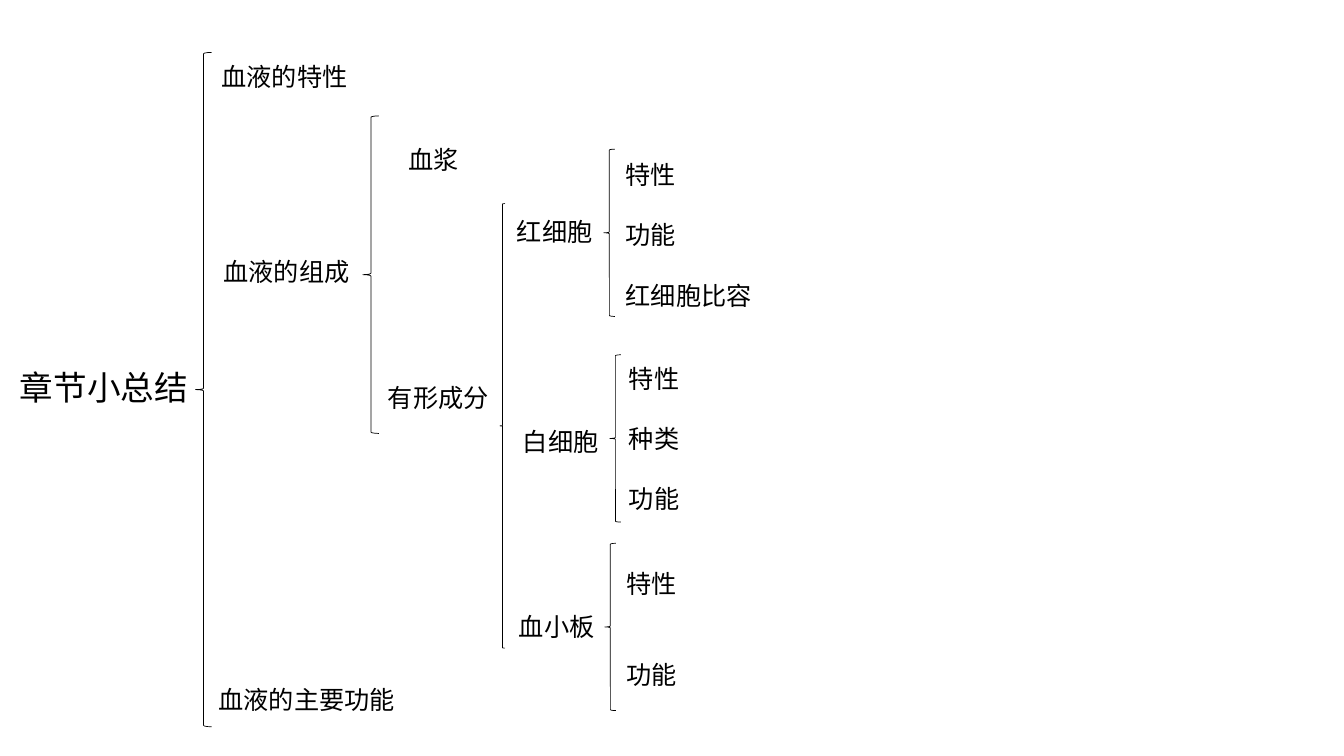
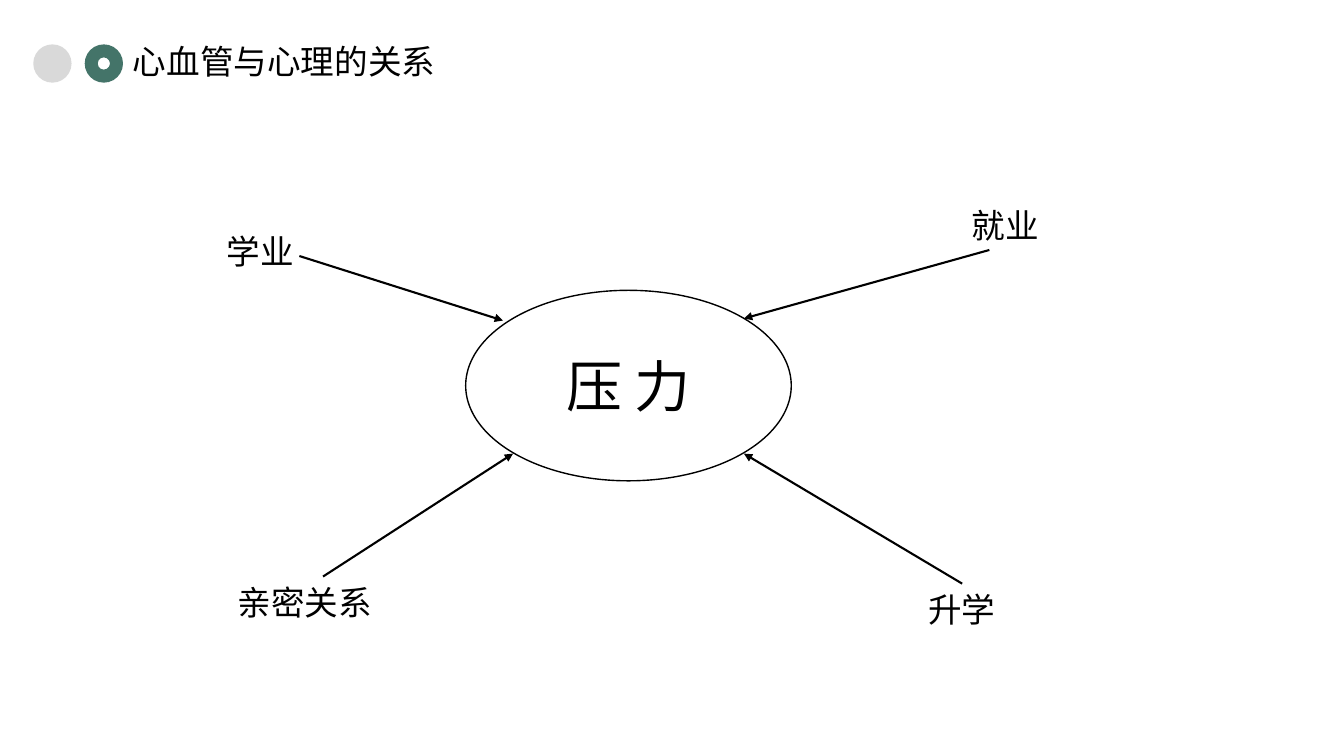
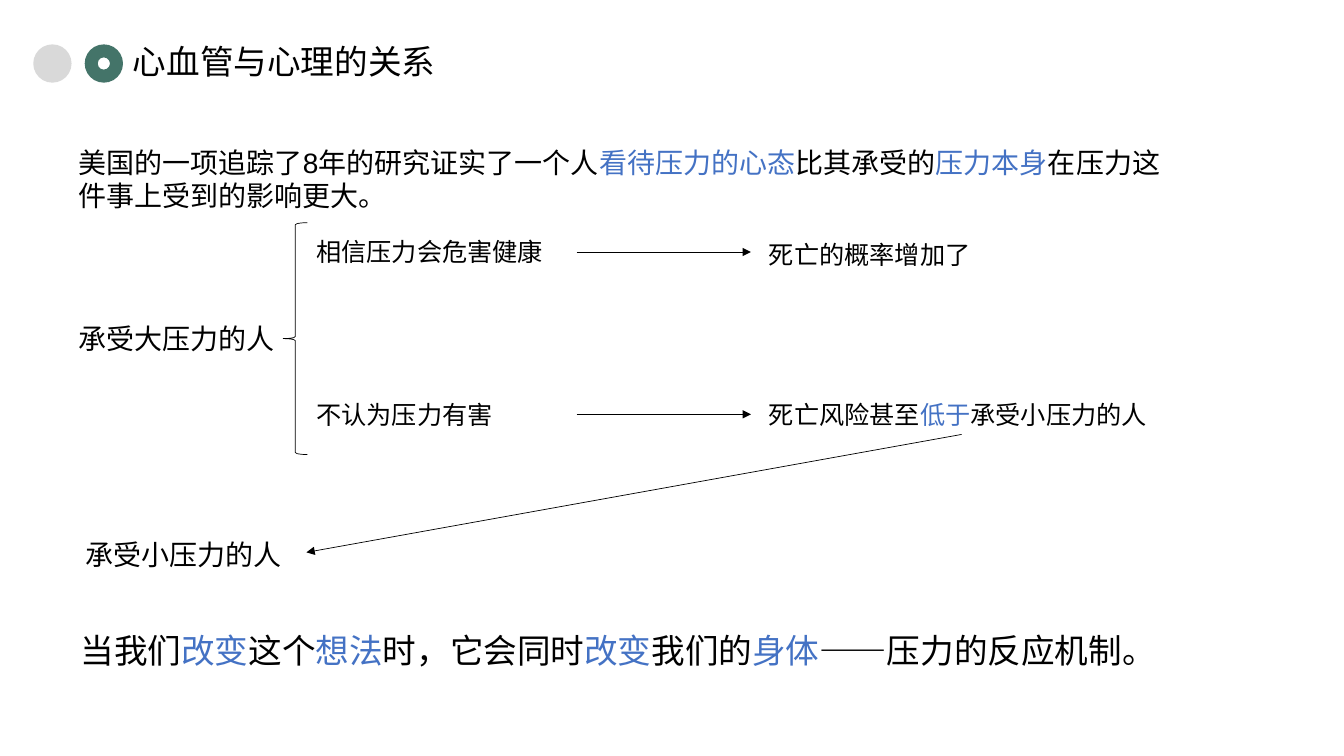
from typing import NamedTuple, Optional

from lxml.etree import SubElement
from pptx import Presentation
from pptx.dml.color import RGBColor
from pptx.enum.shapes import MSO_CONNECTOR as Link, MSO_SHAPE as Form
from pptx.enum.text import MSO_ANCHOR as Anchor, MSO_AUTO_SIZE as Fit, PP_ALIGN as Align
from pptx.oxml.ns import qn
from pptx.util import Inches, Pt

# Shared style; all places are columns and rows of a grid with 0.1 inch cells
CELL = 0.1
COLS, ROWS = 133.33, 75
FONT = "Arial"
INK, BLUE, GREY, GREEN = "000000", "4472C4", "D9D9D9", "447469"
TOP, BOTTOM, RIGHT = 0, 2, 3


class Label(NamedTuple):
    col: float
    row: float
    cols: float
    text: str  # parts between asterisks are blue, lines are paragraphs
    rows: float = 4
    size: float = 18
    gap: float = 0  # points between paragraphs
    inset: float = 1


class Box(NamedTuple):
    col: float
    row: float
    cols: float
    rows: float


class Arrow(NamedTuple):
    start: tuple[float, float]
    end: tuple[float, float]
    label: Optional[int] = None  # label that the arrow starts from
    side: int = RIGHT


def grid(cells: float) -> int:
    return Inches(cells * CELL)


def paint(color, code: str) -> None:
    color.rgb = RGBColor.from_string(code)


def style(par, size: float) -> None:
    par.font.name = FONT
    par.font.size = Pt(size)
    paint(par.font.color, INK)


def write(slide, item: Label):
    box = slide.shapes.add_textbox(*map(grid, (item.col, item.row, item.cols, item.rows)))
    frame = box.text_frame
    frame.word_wrap = True
    frame.auto_size = Fit.SHAPE_TO_FIT_TEXT
    frame.margin_left = grid(item.inset)
    for i, line in enumerate(item.text.split("\n")):
        par = frame.add_paragraph() if i else frame.paragraphs[0]
        style(par, item.size)
        if i:
            par.space_before = Pt(item.gap)
        for j, part in enumerate(line.split("*")):
            run = par.add_run()
            run.text = part
            if j % 2:
                paint(run.font.color, BLUE)
    return box


def draw(slide, form: Form, box: Box, fill: str = "", width: float = 0):
    shape = slide.shapes.add_shape(form, *map(grid, box))
    shape.shadow.inherit = False
    if fill:
        shape.fill.solid()
        paint(shape.fill.fore_color, fill)
    else:
        shape.fill.background()
    if width:
        paint(shape.line.color, INK)
        shape.line.width = Pt(width)
    else:
        shape.line.fill.background()
    return shape


def brace(slide, box: Box) -> None:
    draw(slide, Form.LEFT_BRACE, box, width=0.5)


def point(slide, arrow: Arrow, boxes: list, width: float) -> None:
    ends = map(grid, (*arrow.start, *arrow.end))
    line = slide.shapes.add_connector(Link.STRAIGHT, *ends)
    if arrow.label is not None:
        line.begin_connect(boxes[arrow.label], arrow.side)
    paint(line.line.color, INK)
    line.line.width = Pt(width)
    props = line._element.spPr
    SubElement(props.find(qn("a:ln")), qn("a:tailEnd"), type="triangle")
    SubElement(props, qn("a:effectLst"))


def head(slide) -> None:
    draw(slide, Form.OVAL, Box(3.3, 4.4, 3.8, 3.8), GREY)
    ring = draw(slide, Form.DONUT, Box(8.4, 4.4, 3.8, 3.8), GREEN)
    ring.adjustments[0] = 0.34
    write(slide, Label(12.2, 3.6, 46.6, "心血管与心理的关系", 5, 24))


# Slide 1: outline of the chapter
def outline(slide) -> None:
    gap = 21.6
    for item in (
        Label(1, 35.9, 20.7, "章节小总结", 5, 24),
        Label(21, 5.6, 59.6, "血液的特性"),
        Label(21.2, 24.9, 59.6, "血液的组成"),
        Label(20.7, 67.4, 59.6, "血液的主要功能"),
        Label(39.5, 13.8, 24.4, "血浆"),
        Label(37.5, 37.4, 24.4, "有形成分"),
        Label(50.3, 21, 24.4, "红细胞"),
        Label(50.9, 41.8, 24.4, "白细胞"),
        Label(50.5, 60.2, 24.4, "血小板"),
        Label(61.1, 15.3, 24.4, "特性\n功能\n红细胞比容", 16.2, gap=gap),
        Label(61.4, 35.5, 24.4, "特性\n种类\n功能", 16.2, gap=gap),
        Label(61.2, 55.9, 24.4, "特性\n功能", 13.1, gap=2 * gap),
    ):
        write(slide, item)
    for box in (
        Box(19.4, 5.2, 1.6, 66.9),
        Box(36, 11.5, 1.6, 31.5),
        Box(49.6, 20.2, 0.5, 44.1),
        Box(59.9, 14.8, 1.1, 16.6),
        Box(60.5, 35.2, 1.1, 16.6),
        Box(60, 53.9, 1.1, 16.6),
    ):
        brace(slide, box)


# Slide 2: sources of stress
def stress(slide) -> None:
    head(slide)
    core = draw(slide, Form.OVAL, Box(46.2, 28.8, 32.3, 18.9), width=1)
    core.text_frame.vertical_anchor = Anchor.MIDDLE
    par = core.text_frame.paragraphs[0]
    par.text = "压 力"
    par.alignment = Align.CENTER
    style(par, 40)
    boxes = [write(slide, item) for item in (
        Label(21.5, 22.4, 18.9, "学业", 5, 24),
        Label(22.6, 57.2, 18.9, "亲密关系", 5, 24),
        Label(86, 57.9, 18.9, "升学", 5, 24, inset=6.1),
        Label(88.7, 19.8, 18.9, "就业", 5, 24, inset=7.7),
    )]
    for arrow in (
        Arrow((29.7, 25.4), (49.9, 31.8)),
        Arrow((32, 57.2), (50.9, 45), 1, TOP),
        Arrow((95.4, 57.9), (73.8, 45), 2, TOP),
        Arrow((98.2, 24.9), (73.8, 31.6), 3, BOTTOM),
    ):
        point(slide, arrow, boxes, 1.5)


# Slide 3: how the view of stress matters
def study(slide) -> None:
    head(slide)
    boxes = [write(slide, item) for item in (
        Label(30.4, 23, 26.8, "相信压力会危害健康"),
        Label(30.4, 39.1, 26.8, "不认为压力有害"),
        Label(75.3, 39.1, 40.2, "死亡风险甚至*低于*承受小压力的人"),
        Label(75.3, 23.3, 27.6, "死亡的概率增加了"),
        Label(6.8, 13.9, 110.3, "美国的一项追踪了8年的研究证实了一个人*看待压力的心态*"
              "比其承受的*压力本身*在压力这件事上受到的影响更大。", 7.7, 20),
        Label(6.8, 31.4, 28, "承受大压力的人", 4.4, 20),
        Label(7.5, 52.8, 28, "承受小压力的人", 4.4, 20),
        Label(7, 62, 121, "当我们*改变*这个*想法*时，它会同时*改变*我们的*身体*"
              "——压力的反应机制。", 5, 24),
    )]
    brace(slide, Box(28.1, 22.1, 2.4, 23))
    for arrow in (
        Arrow((57.2, 25), (74.5, 25), 0),
        Arrow((57.2, 41.1), (74.5, 41.1), 1),
        Arrow((95.4, 43.2), (30.4, 54.8), 2, BOTTOM),
    ):
        point(slide, arrow, boxes, 0.5)


def main() -> None:
    deck = Presentation()
    deck.slide_width, deck.slide_height = grid(COLS), grid(ROWS)
    for build in (outline, stress, study):
        build(deck.slides.add_slide(deck.slide_layouts[6]))
    deck.save("out.pptx")


if __name__ == "__main__":
    main()
